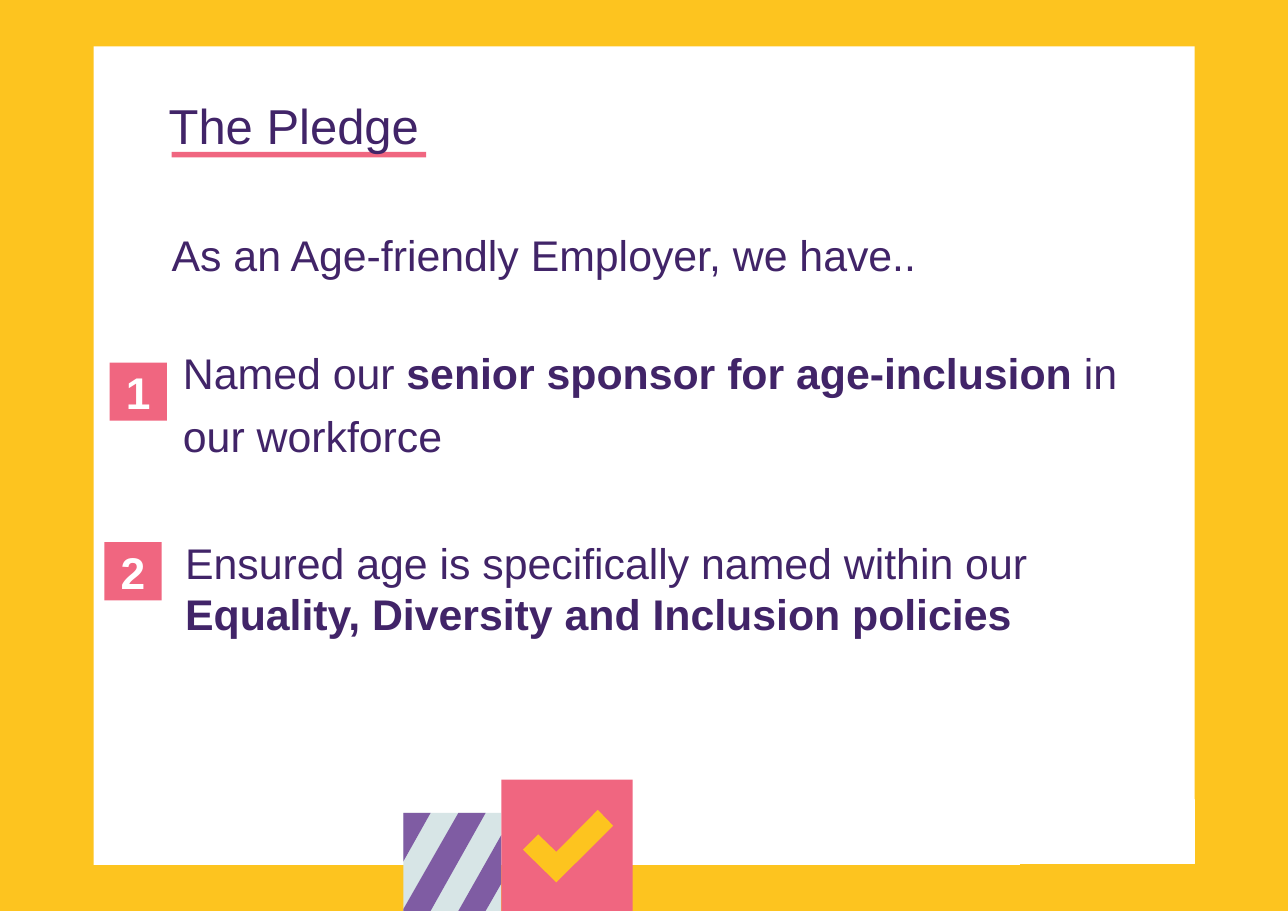
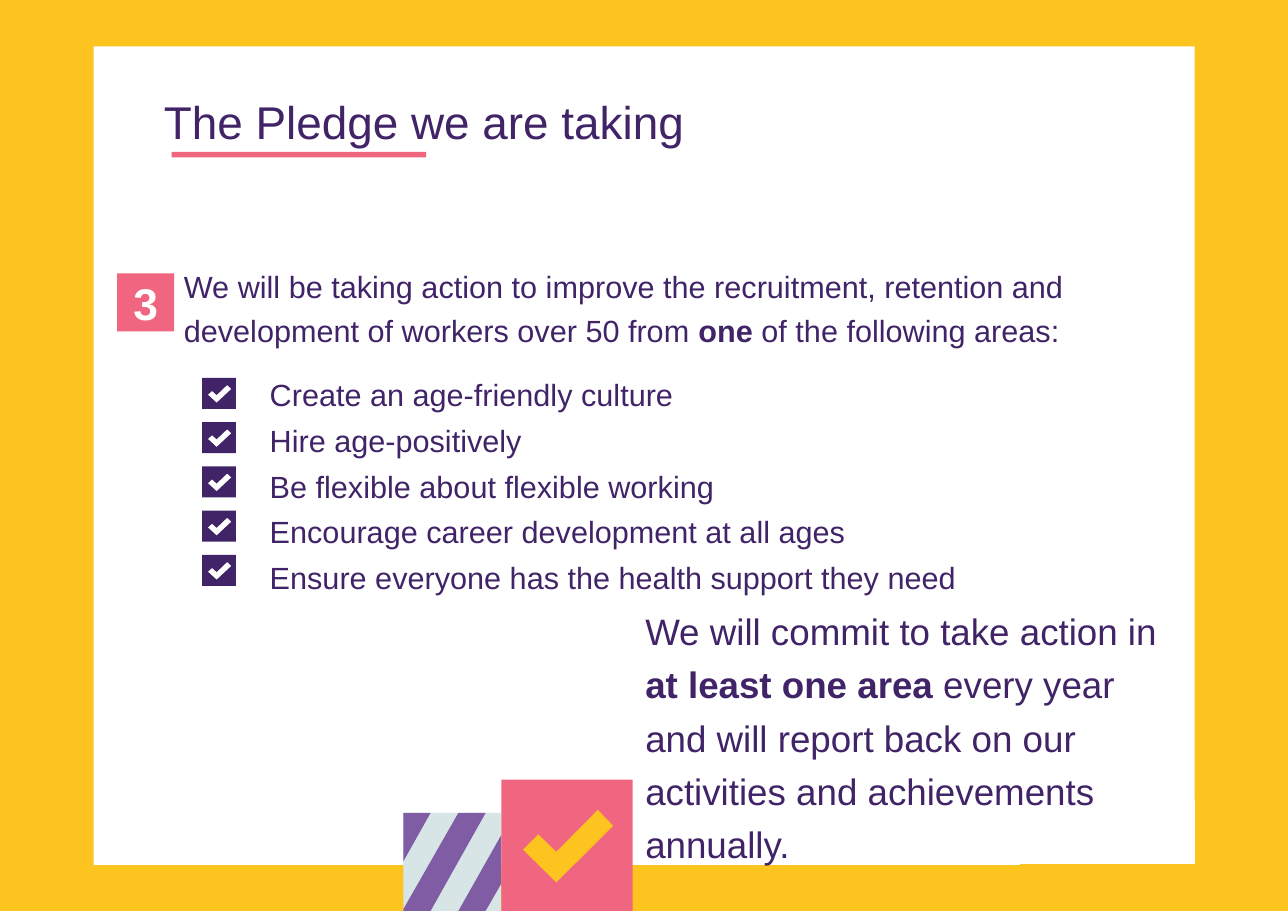
from pptx import Presentation
from pptx.dml.color import RGBColor
from pptx.enum.shapes import MSO_SHAPE as Preset
from pptx.enum.text import MSO_ANCHOR as Anchor, PP_ALIGN as Align
from pptx.util import Cm, Pt

COLORS = {
    "yellow": "FDC41F",
    "purple": "412468",
    "violet": "7F5CA3",
    "pink": "F06680",
    "mist": "D7E5E6",
    "white": "FFFFFF",
}
FONT = "Arial"
PAGE_WIDTH, PAGE_HEIGHT = 29.7, 21
TICK = [(0.83, 0), (0.37, 0.58), (0.17, 0.34), (0, 0.55), (0.37, 1), (1, 0.22)]


def color(name):
    return RGBColor.from_string(COLORS[name])


def write(frame, text, size=20, ink="purple", bold=False, align=Align.LEFT,
          anchor=Anchor.TOP, spacing=1.0, before=1):
    """Fill a frame: one paragraph per line, ** switches bold."""
    frame.word_wrap = True
    frame.vertical_anchor = anchor
    frame.margin_left = frame.margin_right = 0
    frame.margin_top = frame.margin_bottom = 0
    for index, line in enumerate(text.split("\n")):
        para = frame.add_paragraph() if index else frame.paragraphs[0]
        para.alignment = align
        para.line_spacing = spacing
        para.space_before = Pt(before)
        for part, words in enumerate(line.split("**")):
            if not words:
                continue
            span = para.add_run()
            span.text = words
            span.font.name = FONT
            span.font.size = Pt(size)
            span.font.bold = bold or part % 2 == 1
            span.font.color.rgb = color(ink)


class PledgeDeck:
    def __init__(self):
        self.deck = Presentation()
        self.deck.slide_width = Cm(PAGE_WIDTH)
        self.deck.slide_height = Cm(PAGE_HEIGHT)
        self.page = None

    # Basic elements
    def paint(self, shape, fill):
        shape.shadow.inherit = False
        shape.fill.solid()
        shape.fill.fore_color.rgb = color(fill)
        shape.line.fill.background()
        return shape

    def block(self, left, top, width, height, fill):
        shape = self.page.shapes.add_shape(
            Preset.RECTANGLE, Cm(left), Cm(top), Cm(width), Cm(height))
        return self.paint(shape, fill)

    def outline(self, contours, fill):
        contours = [[(Cm(x), Cm(y)) for x, y in points] for points in contours]
        builder = self.page.shapes.build_freeform(*contours[0][0], scale=1.0)
        for index, (start, *others) in enumerate(contours):
            if index:
                builder.move_to(*start)
            builder.add_line_segments(others, close=True)
        return self.paint(builder.convert_to_shape(), fill)

    def tick(self, left, top, width, height, fill):
        points = [(left + x * width, top + y * height) for x, y in TICK]
        self.outline([points], fill)

    def text(self, left, top, width, height, words, **style):
        box = self.page.shapes.add_textbox(
            Cm(left), Cm(top), Cm(width), Cm(height))
        write(box.text_frame, words, **style)

    # Pledge elements
    def badge(self, left, top, number):
        shape = self.block(left, top, 1.32, 1.34, "pink")
        write(shape.text_frame, number, size=29, ink="white", bold=True,
              align=Align.CENTER, anchor=Anchor.MIDDLE, before=0)

    def checkbox(self, left, top):
        self.block(left, top, 0.78, 0.72, "purple")
        self.tick(left + 0.14, top + 0.17, 0.53, 0.4, "white")

    def emblem(self):
        left, top, right, bottom = 9.3, 18.74, 11.56, PAGE_HEIGHT
        self.block(left, top, right - left, bottom - top, "mist")
        self.outline([
            [(9.93, top), (left, top), (left, 19.86)],
            [(11.2, top), (10.57, top), (left, 20.96), (left, bottom),
             (9.93, bottom)],
            [(right, 19.25), (10.57, bottom), (11.2, bottom), (right, 20.37)],
        ], "violet")
        self.block(right, 17.97, 3.03, 3.03, "pink")
        self.tick(12.06, 18.67, 2.08, 1.67, "yellow")

    def new_page(self):
        """Add a slide with the frame, emblem and title rule."""
        self.page = self.deck.slides.add_slide(self.deck.slide_layouts[6])
        background = self.page.background.fill
        background.solid()
        background.fore_color.rgb = color("yellow")
        left, top, right, bottom = 2.16, 1.07, 27.55, 19.94
        self.outline([[(right, top), (left, top), (left, bottom),
                       (23.52, bottom), (23.52, 18.75), (right, 18.75)]],
                     "white")
        corner = self.block(23.44, 18.44, 4.11, 1.47, "white")
        corner.line.color.rgb = color("white")
        corner.line.width = Pt(1)
        self.emblem()
        self.block(3.96, 3.5, 5.87, 0.13, "pink")


def main():
    pledge = PledgeDeck()

    # Slide 1: first two commitments
    pledge.new_page()
    pledge.text(3.89, 2.21, 6.5, 1.4, "The Pledge", size=32)
    pledge.text(3.96, 5.26, 19.5, 1.2,
                "As an Age-friendly Employer, we have..", size=28)
    pledge.badge(2.53, 8.36, "1")
    pledge.text(4.22, 7.75, 22.5, 2.8,
                "Named our **senior sponsor for age-inclusion** in our workforce",
                size=28, spacing=1.21)
    pledge.badge(2.41, 12.5, "2")
    pledge.text(4.27, 12.37, 21.8, 2.4,
                "Ensured age is specifically named within our "
                "**Equality, Diversity and Inclusion policies**",
                size=28, before=3.8)

    # Slide 2: third commitment and its areas
    pledge.new_page()
    pledge.text(3.78, 2.16, 13.1, 1.3, "The Pledge we are taking", size=30)
    pledge.badge(2.7, 6.3, "3")
    pledge.text(4.24, 5.99, 23, 2.1,
                "We will be taking action to improve the recruitment, retention "
                "and development of workers over 50 from **one** of the "
                "following areas:", spacing=1.21)
    areas = [
        "Create an age-friendly culture",
        "Hire age-positively",
        "Be flexible about flexible working",
        "Encourage career development at all ages",
        "Ensure everyone has the health support they need",
    ]
    for row in range(len(areas)):
        pledge.checkbox(4.66, 8.71 + row * 1.02)
    pledge.text(6.22, 8.48, 17.1, 5.4, "\n".join(areas), spacing=1.21)
    pledge.text(14.88, 13.82, 12.07, 6.1,
                "We will commit to take action in **at least one area** every "
                "year and will report back on our activities and achievements "
                "annually.", size=24, spacing=1.21)

    pledge.deck.save("out.pptx")


if __name__ == "__main__":
    main()
